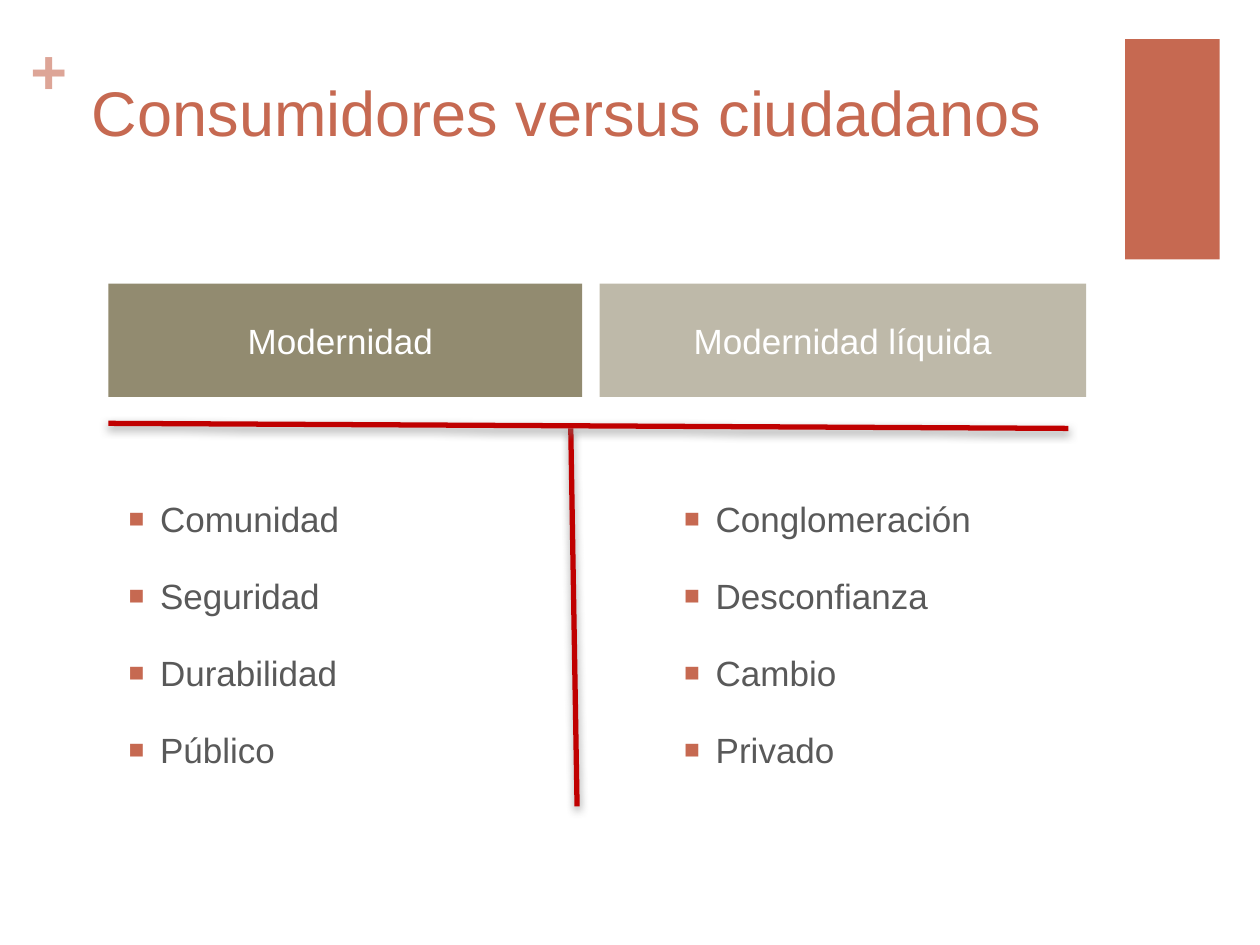
from lxml.etree import SubElement
from pptx import Presentation
from pptx.dml.color import RGBColor
from pptx.enum.shapes import MSO_CONNECTOR, MSO_SHAPE
from pptx.enum.text import MSO_ANCHOR as Anchor, MSO_AUTO_SIZE, PP_ALIGN as Align
from pptx.oxml.ns import qn
from pptx.util import Inches, Pt

COLORS = {"accent": "C66951", "plus": "DDA597", "olive": "928B70", "sand": "BEB9A9",
          "white": "FFFFFF", "body": "595959", "rule": "C00000", "shadow": "808080"}

TITLE = "Consumidores versus ciudadanos"
COLUMNS = [
    {"heading": "Modernidad ", "fill": "olive", "head_left": 0.86, "head_width": 3.76,
     "list_left": 0.92, "items": ["Comunidad", "Seguridad", "Durabilidad", "Público"]},
    {"heading": "Modernidad líquida", "fill": "sand", "head_left": 4.76, "head_width": 3.86,
     "list_left": 5.33, "items": ["Conglomeración", "Desconfianza", "Cambio", "Privado"]},
]
RULES = [((4.53, 3.4), (4.58, 6.4)), ((0.86, 3.36), (8.48, 3.4))]


def rgb(name):
    return RGBColor.from_string(COLORS[name])


def place(shape, left, top, width, height):
    shape.left, shape.top = Inches(left), Inches(top)
    shape.width, shape.height = Inches(width), Inches(height)


def add_bullet(para):
    props = para._p.get_or_add_pPr()
    props.set("marL", str(Inches(0.25)))
    props.set("indent", str(-Inches(0.25)))
    color = SubElement(props, qn("a:buClr"))
    SubElement(color, qn("a:srgbClr"), val=COLORS["accent"])
    SubElement(props, qn("a:buSzPct"), val="75000")
    SubElement(props, qn("a:buFont"), typeface="Arial")
    SubElement(props, qn("a:buChar"), char="■")


def write(shape, lines, size=20, color="body", bold=False, align=Align.LEFT,
          anchor=Anchor.TOP, insets=(0.1, 0.05, 0.1, 0.05), gap=0, bullets=False):
    frame = shape.text_frame
    frame.word_wrap = True
    frame.auto_size = MSO_AUTO_SIZE.NONE
    frame.vertical_anchor = anchor
    (frame.margin_left, frame.margin_top,
     frame.margin_right, frame.margin_bottom) = map(Inches, insets)
    for index, line in enumerate(lines):
        para = frame.add_paragraph() if index else frame.paragraphs[0]
        para.alignment = align
        para.line_spacing = 1.0
        para.space_before = Pt(gap if index else 0)
        para.space_after = Pt(0)
        if bullets:
            add_bullet(para)
        else:
            props = para._p.get_or_add_pPr()
            props.set("marL", "0")
            props.set("indent", "0")
            SubElement(props, qn("a:buNone"))
        span = para.add_run()
        span.text = line
        span.font.name, span.font.size, span.font.bold = "Arial", Pt(size), bold
        span.font.color.rgb = rgb(color)


def add_rule(page, start, end):
    rule = page.shapes.add_connector(MSO_CONNECTOR.STRAIGHT, *map(Inches, start + end))
    rule.line.color.rgb = rgb("rule")
    rule.line.width = Pt(3)
    effects = SubElement(rule._element.spPr, qn("a:effectLst"))
    shadow = SubElement(effects, qn("a:outerShdw"), blurRad=str(Pt(5)), dist=str(Pt(2)),
                        dir="5400000", rotWithShape="0")
    color = SubElement(shadow, qn("a:srgbClr"), val=COLORS["shadow"])
    SubElement(color, qn("a:alpha"), val="75000")


def main():
    deck = Presentation()
    deck.slide_width, deck.slide_height = Inches(10), Inches(7.5)
    page = deck.slides.add_slide(deck.slide_layouts.get_by_name("Comparison"))
    title, *bodies = [holder for holder in page.placeholders
                      if holder.placeholder_format.idx < 10]

    # Corner block and plus sign
    block = page.shapes.add_shape(MSO_SHAPE.RECTANGLE, 0, 0, 0, 0)
    place(block, 8.93, 0.31, 0.75, 1.75)
    block.shadow.inherit = False
    block.fill.solid()
    block.fill.fore_color.rgb = rgb("accent")
    block.line.fill.background()
    plus = page.shapes.add_textbox(0, 0, 0, 0)
    place(plus, 0.24, 0.25, 0.29, 0.61)
    write(plus, ["+"], size=36, color="plus", bold=True, insets=(0, 0, 0, 0))

    # Title
    place(title, 0.63, 0.53, 8.26, 1.22)
    write(title, [TITLE], size=36, color="accent")

    # Two compared columns: heading bar above a bulleted list
    for column, heading, listing in zip(COLUMNS, bodies[::2], bodies[1::2]):
        place(heading, column["head_left"], 2.25, column["head_width"], 0.9)
        heading.fill.solid()
        heading.fill.fore_color.rgb = rgb(column["fill"])
        write(heading, [column["heading"]], color="white", align=Align.CENTER,
              anchor=Anchor.MIDDLE, insets=(0.1, 0, 0.1, 0))
        place(listing, column["list_left"], 3.28, 3.97, 2.95)
        write(listing, column["items"], gap=20, bullets=True,
              insets=(0.1, 0.67, 0.1, 0.05))

    # T-shaped divider
    for start, end in RULES:
        add_rule(page, start, end)

    deck.save("out.pptx")


if __name__ == "__main__":
    main()
